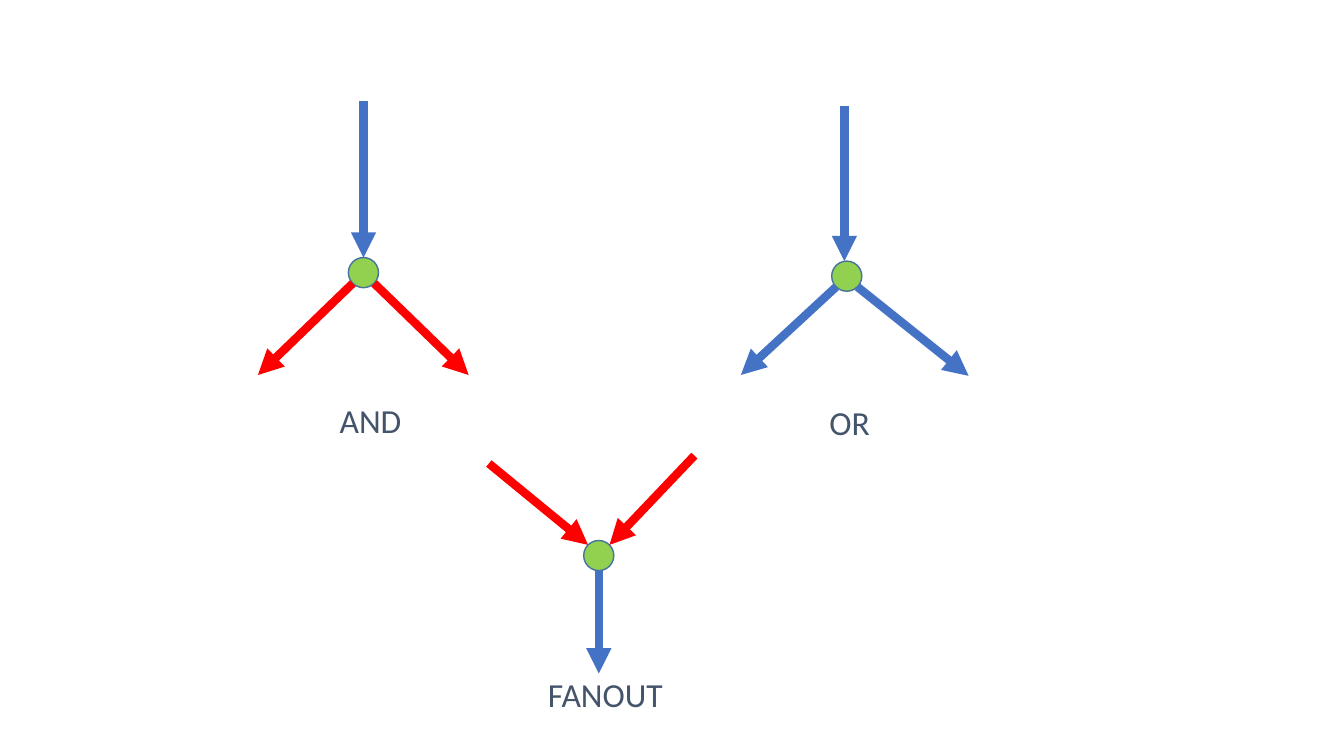
from lxml.etree import SubElement
from pptx import Presentation
from pptx.dml.color import RGBColor
from pptx.enum.shapes import MSO_CONNECTOR, MSO_SHAPE
from pptx.enum.text import MSO_ANCHOR, PP_ALIGN
from pptx.oxml.ns import qn
from pptx.util import Cm, Pt

HUES = {"blue": "4472C4", "red": "FF0000", "node": "92D050",
        "rim": "43739E", "text": "44546A"}
RADIUS = 0.38
DIAG = 0.27  # rim offset at 45 degrees

# Gates: name, centre, label corner, arrows (colour, far end, rim side, inward)
GATES = [
    ("AND", (9.16, 6.87), (8.31, 10.08), [
        ("red", (6.5, 9.45), (-1, 1), False),
        ("red", (11.81, 9.45), (1, 1), False),
        ("blue", (9.16, 2.54), (0, -1), True)]),
    ("OR", (21.34, 6.96), (20.65, 10.13), [
        ("blue", (21.28, 2.67), (0, -1), True),
        ("blue", (24.41, 9.47), (1, 1), False),
        ("blue", (18.67, 9.45), (-1, 1), False)]),
    ("FANOUT", (15.09, 14), (13.56, 16.97), [
        ("red", (12.32, 11.68), (-1, -1), True),
        ("red", (17.5, 11.48), (1, -1), True),
        ("blue", (15.09, 16.97), (0, 1), False)]),
]


def style(item, values):
    for key, value in values.items():
        setattr(item, key, value)


def hue(name):
    return RGBColor.from_string(HUES[name])


def node(slide, x, y):
    dot = slide.shapes.add_shape(MSO_SHAPE.OVAL, Cm(x - RADIUS), Cm(y - RADIUS),
                                 Cm(2 * RADIUS), Cm(2 * RADIUS))
    dot.shadow.inherit = False
    dot.fill.solid()
    dot.fill.fore_color.rgb = hue("node")
    dot.line.color.rgb = hue("rim")
    dot.line.width = Pt(1)


def arrow(slide, tint, start, end):
    link = slide.shapes.add_connector(
        MSO_CONNECTOR.STRAIGHT, *(Cm(v) for v in (*start, *end)))
    link.line.color.rgb = hue(tint)
    link.line.width = Pt(6)
    SubElement(link.line._get_or_add_ln(), qn("a:tailEnd"), type="triangle")
    SubElement(link._element.spPr, qn("a:effectLst"))


def label(slide, text, x, y):
    box = slide.shapes.add_textbox(Cm(x), Cm(y), Cm(5.66), Cm(1.37))
    style(box.text_frame, {"word_wrap": True, "vertical_anchor": MSO_ANCHOR.TOP})
    para = box.text_frame.paragraphs[0]
    style(para, {"alignment": PP_ALIGN.LEFT, "line_spacing": 0.9,
                 "space_before": Pt(10)})
    run = para.add_run()
    run.text = text
    style(run.font, {"name": "Calibri", "size": Pt(24)})
    run.font.color.rgb = hue("text")


def gate(slide, name, hub, spot, links):
    node(slide, *hub)
    for tint, far, (dx, dy), inward in links:
        # Upright arrows keep their own x; slanted ones meet the rim diagonally
        if dx:
            near = (hub[0] + dx * DIAG, hub[1] + dy * DIAG)
        else:
            near = (far[0], hub[1] + dy * RADIUS)
        ends = (far, near) if inward else (near, far)
        arrow(slide, tint, *ends)
    label(slide, name, *spot)


def main():
    deck = Presentation()
    style(deck, {"slide_width": Cm(33.87), "slide_height": Cm(19.05)})
    slide = deck.slides.add_slide(deck.slide_layouts[6])
    for parts in GATES:
        gate(slide, *parts)
    deck.save("out.pptx")


main()
